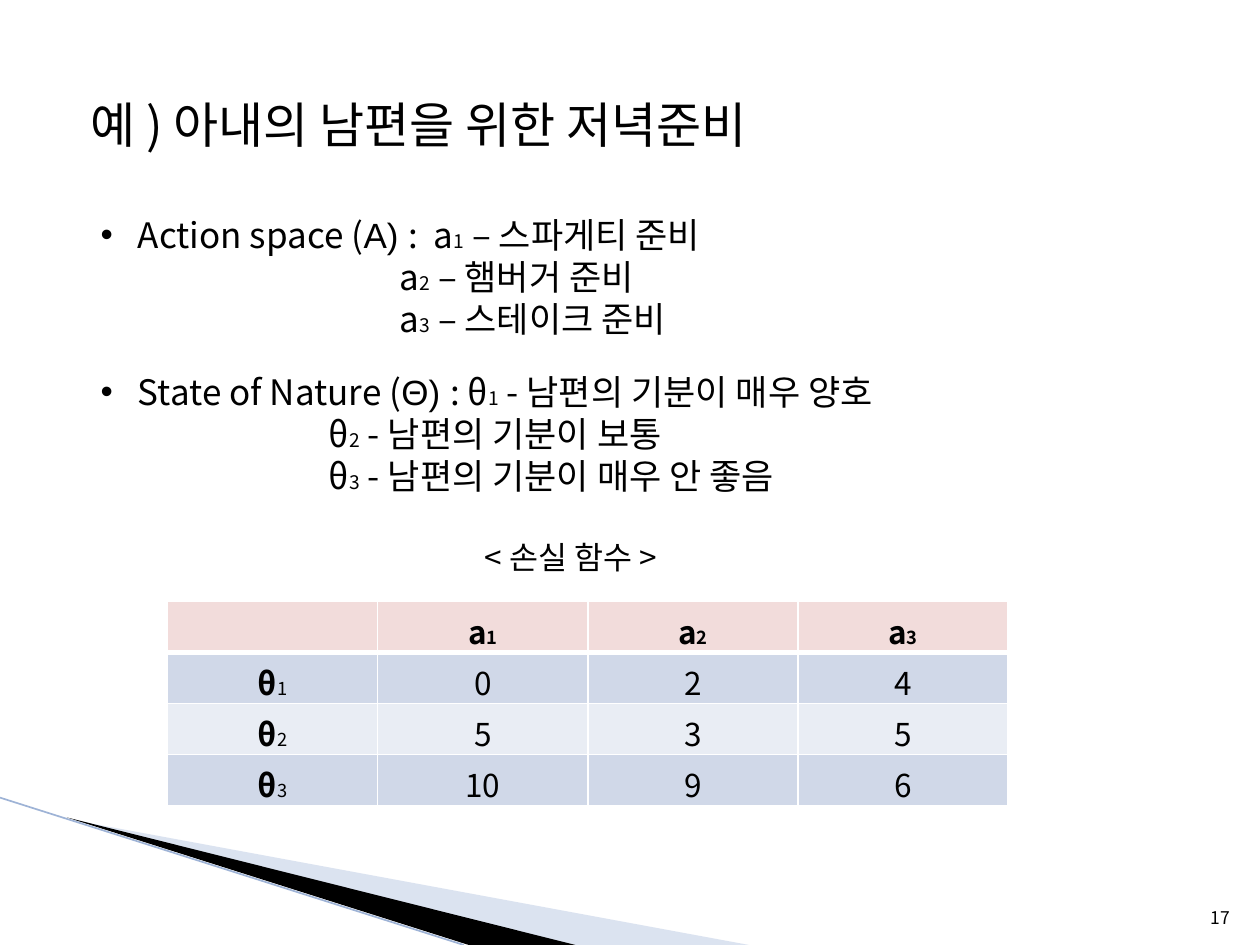
from dataclasses import dataclass

from lxml.etree import SubElement
from pptx import Presentation
from pptx.dml.color import RGBColor
from pptx.enum.shapes import MSO_CONNECTOR as Connector
from pptx.enum.text import MSO_ANCHOR as Anchor, PP_ALIGN as Align
from pptx.oxml.ns import qn
from pptx.util import Cm, Pt


@dataclass(frozen=True)
class Theme:
    font: str = "Noto Sans CJK KR"
    greek_font: str = "Arial"
    ink: str = "000000"
    white: str = "FFFFFF"
    pale_wedge: str = "A7B9DB"
    edge: str = "9EB3D6"
    header: str = "F2DCDB"
    bands: tuple = ("D0D8E8", "E9EDF4")
    title: float = 28
    body: float = 20
    body_sub: float = 11
    table: float = 18
    table_sub: float = 10.5
    page: float = 10


@dataclass(frozen=True)
class Box:
    left: float
    top: float
    width: float
    height: float

    def lengths(self) -> list:
        return [Cm(v) for v in (self.left, self.top, self.width, self.height)]


@dataclass(frozen=True)
class Definition:
    """A bulleted set: its label, Greek sign and numbered members."""
    box: Box
    label: str
    sign: str
    colon: str
    symbol: str
    dash: str
    members: tuple
    indent: float


THEME = Theme()
DEFINITIONS = (
    Definition(Box(1.78, 4.17, 16.08, 2.82), "Action space (", "Α) ", ":  ", "a", "–",
               ("스파게티 준비", "햄버거 준비", "스테이크 준비"), 6.03),
    Definition(Box(1.78, 7.34, 20.04, 2.82), "State of Nature (", "Θ) ", ": ", "θ", "-",
               ("남편의 기분이 매우 양호", "남편의 기분이 보통", "남편의 기분이 매우 안 좋음"), 4.6),
)
LOSSES = ((0, 2, 4), (5, 3, 5), (10, 9, 6))


def set_font(font, size: float = None, name: str = None, bold: bool = None) -> None:
    if size:
        font.size = Pt(size)
    if bold is not None:
        font.bold = bold
    if name:
        font.color.rgb = RGBColor.from_string(THEME.ink)
        font.name = name
        SubElement(font._element, qn("a:ea")).set("typeface", name)


def add_run(paragraph, text: str, size: float = None, name: str = None,
            bold: bool = None) -> None:
    run = paragraph.add_run()
    run.text = text
    set_font(run.font, size, name, bold)


def set_indent(paragraph, margin: float, bullet: str = "") -> None:
    properties = paragraph._p.get_or_add_pPr()
    properties.set("marL", str(Cm(margin)))
    properties.set("indent", str(-Cm(margin) if bullet else 0))
    if bullet:
        SubElement(properties, qn("a:buFont")).set("typeface", THEME.greek_font)
        SubElement(properties, qn("a:buChar")).set("char", bullet)


def add_frame(slide, box: Box, anchor=Anchor.TOP):
    frame = slide.shapes.add_textbox(*box.lengths()).text_frame
    frame.word_wrap = True
    frame.vertical_anchor = anchor
    return frame


def add_label(slide, box: Box, text: str, size: float, align=Align.LEFT,
              anchor=Anchor.TOP) -> None:
    paragraph = add_frame(slide, box, anchor).paragraphs[0]
    paragraph.text = text
    paragraph.alignment = align
    paragraph.line_spacing = Pt(size * 1.2)
    set_font(paragraph.font, size, THEME.font)


def add_definition(slide, item: Definition) -> None:
    frame = add_frame(slide, item.box)
    for number, member in enumerate(item.members, 1):
        first = number == 1
        paragraph = frame.paragraphs[0] if first else frame.add_paragraph()
        paragraph.line_spacing = Pt(THEME.body * 1.2)
        set_indent(paragraph, 0.75 if first else item.indent, "•" if first else "")
        if first:
            add_run(paragraph, item.label, THEME.body, THEME.font)
            add_run(paragraph, item.sign, THEME.body, THEME.greek_font)
        else:
            set_font(paragraph.font, name=THEME.font)
        name = THEME.font if first else None
        lead = item.colon if first else ""
        add_run(paragraph, lead + item.symbol, THEME.body, name)
        add_run(paragraph, str(number), THEME.body_sub, name)
        add_run(paragraph, f" {item.dash} {member}", THEME.body, name)


def add_wedge(slide, points: tuple, color: str, opacity: int = 100) -> None:
    corners = [(Cm(x), Cm(y)) for x, y in points]
    builder = slide.shapes.build_freeform(*corners[0])
    builder.add_line_segments(corners[1:], close=True)
    wedge = builder.convert_to_shape()
    wedge.shadow.inherit = False
    wedge.line.fill.background()
    wedge.fill.solid()
    wedge.fill.fore_color.rgb = RGBColor.from_string(color)
    if opacity < 100:
        fill_color = wedge.fill._xPr.find(qn("a:solidFill"))[0]
        SubElement(fill_color, qn("a:alpha")).set("val", str(opacity * 1000))


def style_cell(cell, fill: str, bottom: float) -> None:
    cell.margin_top, cell.margin_bottom = Cm(0.13), Cm(0)
    properties = cell._tc.get_or_add_tcPr()
    for side, width in (("L", 1), ("R", 1), ("T", 1), ("B", bottom)):
        border = SubElement(properties, qn(f"a:ln{side}"), w=str(Pt(width)))
        solid = SubElement(border, qn("a:solidFill"))
        SubElement(solid, qn("a:srgbClr")).set("val", THEME.white)
    cell.fill.solid()
    cell.fill.fore_color.rgb = RGBColor.from_string(fill)


def add_loss_table(slide, box: Box) -> None:
    size = len(LOSSES) + 1
    table = slide.shapes.add_table(size, size, *box.lengths()).table
    for row in range(size):
        for column in range(size):
            cell = table.cell(row, column)
            fill = THEME.bands[(row - 1) % 2] if row else THEME.header
            style_cell(cell, fill, 1 if row else 3)
            paragraph = cell.text_frame.paragraphs[0]
            paragraph.alignment = Align.CENTER
            set_font(paragraph.font, name=THEME.font, bold=None if row and not column else not row)
            if row and column:
                add_run(paragraph, str(LOSSES[row - 1][column - 1]), THEME.table)
            elif row or column:
                add_run(paragraph, "θ" if row else "a", THEME.table, bold=True)
                add_run(paragraph, str(row or column), THEME.table_sub, bold=not row)


def main() -> None:
    deck = Presentation()
    deck.slide_width, deck.slide_height = Cm(25.4), Cm(19.05)
    slide = deck.slides.add_slide(deck.slide_layouts[6])

    # Corner decoration
    add_wedge(slide, ((1.4, 16.52), (15.1, 19.05), (11.58, 19.05)), THEME.pale_wedge, 40)
    add_wedge(slide, ((1.35, 16.48), (11.6, 19.05), (9.45, 19.05)), THEME.ink)
    edge = slide.shapes.add_connector(Connector.STRAIGHT, Cm(0), Cm(16.08), Cm(9.35), Cm(19.05))
    edge.line.color.rgb = RGBColor.from_string(THEME.edge)
    edge.line.width = Pt(0.95)
    SubElement(edge._element.spPr, qn("a:effectLst"))

    # Title and definitions
    add_label(slide, Box(1.57, 1.78, 15.88, 1.45), "예 ) 아내의 남편을 위한 저녁준비", THEME.title)
    for item in DEFINITIONS:
        add_definition(slide, item)

    # Loss function
    add_loss_table(slide, Box(3.38, 12.12, 16.94, 4.12))
    add_label(slide, Box(9.52, 10.72, 5.16, 1.02), "< 손실 함수 >", THEME.table)

    # Page number
    add_label(slide, Box(24.03, 17.81, 1.02, 1.02), "17", THEME.page, Align.RIGHT, Anchor.BOTTOM)
    deck.save("out.pptx")


if __name__ == "__main__":
    main()
